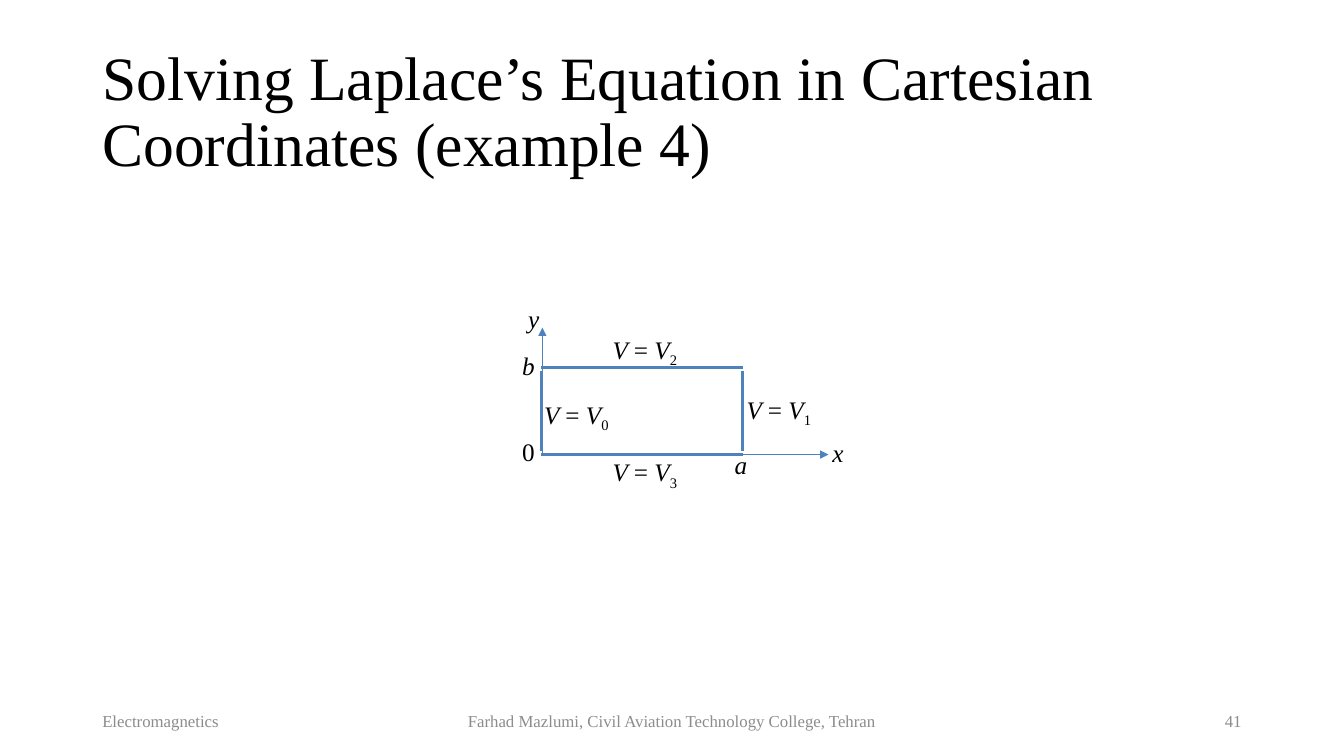
"""Build the Laplace example slide: a rectangular region with four boundary potentials."""
import dataclasses

import lxml.etree
import pptx
import pptx.dml.color
import pptx.enum.shapes
import pptx.enum.text
import pptx.oxml.ns
import pptx.util

Pt = pptx.util.Pt
Align = pptx.enum.text.PP_ALIGN
Anchor = pptx.enum.text.MSO_ANCHOR
qn = pptx.oxml.ns.qn


@dataclasses.dataclass(frozen=True)
class Theme:
    """Colours, type sizes and line weights of the slide."""
    font: str = "Times New Roman"
    ink: str = "000000"
    muted: str = "8C8C8C"
    blue: str = "4F81BD"
    title: int = 44
    label: int = 18
    footer: int = 12
    axis: float = 0.5
    wall: float = 2.25


THEME = Theme()


def rgb(value):
    """Return a colour object for a hex string."""
    return pptx.dml.color.RGBColor.from_string(value)


def add_text(s, box, runs, size=THEME.label, color=THEME.ink, align=Align.LEFT,
             anchor=Anchor.TOP, spacing=1.0):
    """Add a text box of (text, italic, baseline) runs."""
    tf = s.shapes.add_textbox(*map(Pt, box)).text_frame
    tf.word_wrap = True
    tf.vertical_anchor = anchor
    p = tf.paragraphs[0]
    p.alignment = align
    p.line_spacing = spacing
    for text, italic, baseline in runs:
        r = p.add_run()
        r.text = text
        r.font.name = THEME.font
        r.font.size = Pt(size)
        r.font.italic = italic
        r.font.color.rgb = rgb(color)
        if baseline:
            r.font._element.set("baseline", str(baseline * 1000))


def add_line(s, start, end, weight, arrow=False):
    """Add a straight blue line, with an arrowhead at its end if asked."""
    straight = pptx.enum.shapes.MSO_CONNECTOR.STRAIGHT
    sp = s.shapes.add_connector(straight, *map(Pt, (*start, *end)))
    sp.line.color.rgb = rgb(THEME.blue)
    sp.line.width = Pt(weight)
    if arrow:
        ln = sp.line._get_or_add_ln()
        lxml.etree.SubElement(ln, qn("a:tailEnd"), type="triangle")
    lxml.etree.SubElement(sp._element.spPr, qn("a:effectLst"))


def add_symbol(s, x, y, text, italic=True):
    """Add a one-letter label."""
    add_text(s, (x, y, 31.7, 28.8), [(text, italic, 0)])


def add_potential(s, x, y, index):
    """Add a boundary condition with a subscript index."""
    runs = [("V ", True, 0), ("= ", False, 0), ("V", True, 0), (index, False, -25)]
    add_text(s, (x, y, 64, 28.8), runs)


def add_footer(s, x, width, text, align):
    """Add one part of the footer."""
    add_text(s, (x, 500.4, width, 28.8), [(text, False, 0)], size=THEME.footer,
             color=THEME.muted, align=align, anchor=Anchor.MIDDLE)


def add_region(s):
    """Draw the axes and the four walls of the region."""
    left, right, top, bottom, gap = 386.6, 530.6, 262.8, 324.7, 2.2
    origin = (387.4, bottom)
    for tip in ((origin[0], 234), (591.8, bottom)):
        add_line(s, origin, tip, THEME.axis, arrow=True)
    for x in (left, right):
        add_line(s, (x, top + gap), (x, bottom - gap), THEME.wall)
    for y in (bottom, top):
        add_line(s, (left, y), (right, y), THEME.wall)


def main():
    """Build and save the slide."""
    prs = pptx.Presentation()
    prs.slide_width, prs.slide_height = Pt(960), Pt(540)
    s = prs.slides.add_slide(prs.slide_layouts[6])

    title = "Solving Laplace’s Equation in Cartesian Coordinates (example 4)"
    add_text(s, (66, 28.8, 828, 104.4), [(title, False, 0)], size=THEME.title,
             anchor=Anchor.MIDDLE, spacing=0.9)
    add_footer(s, 66, 216, "Electromagnetics", Align.LEFT)
    add_footer(s, 318, 324, "Farhad Mazlumi, Civil Aviation Technology College, Tehran",
               Align.CENTER)
    add_footer(s, 678, 216, "41", Align.RIGHT)

    add_region(s)
    for x, y, text in ((587.5, 308.9, "x"), (370.1, 213.1, "y"),
                       (365.8, 247, "b"), (517.7, 317.5, "a")):
        add_symbol(s, x, y, text)
    add_symbol(s, 365.8, 308.2, "0", italic=False)
    for x, y, index in ((381.6, 281.5, "0"), (526.3, 277.9, "1"),
                        (430.6, 235.4, "2"), (430.6, 322.6, "3")):
        add_potential(s, x, y, index)

    prs.save("out.pptx")


if __name__ == "__main__":
    main()
